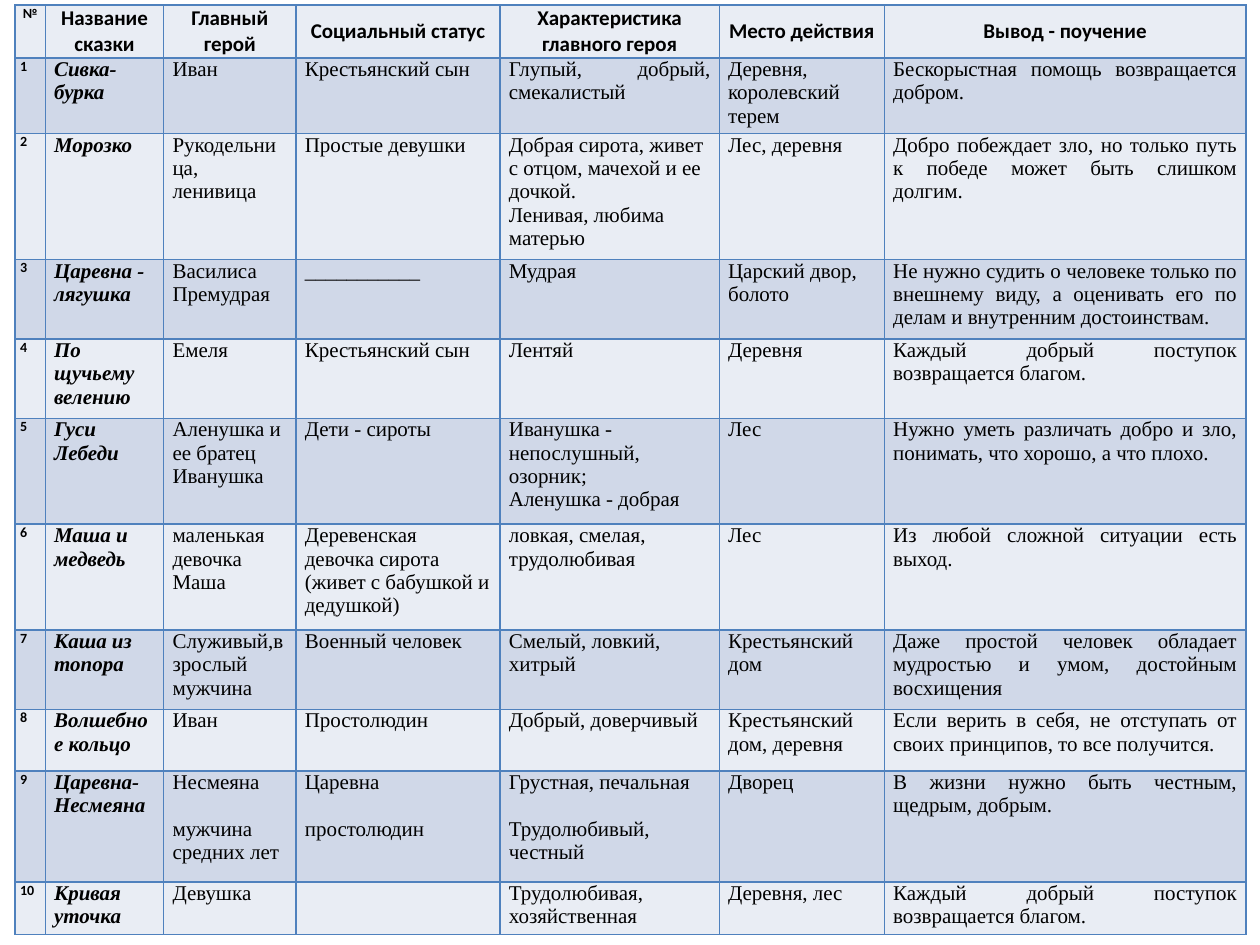
from lxml import etree
from pptx import Presentation
from pptx.dml.color import RGBColor
from pptx.enum import text
from pptx.oxml import ns
from pptx.util import Inches, Pt

COLORS = {"border": "4F81BD", "light": "E9EDF4", "dark": "D0D8E8", "text": "000000"}
HEADER = ["№", "Название сказки", "Главный герой", "Социальный статус",
          "Характеристика главного героя", "Место действия", "Вывод - поучение"]
# A line break starts a new paragraph, a double one leaves a gap before it.
TALES = [
    ("Сивка- бурка", "Иван", "Крестьянский сын", "Глупый, добрый, смекалистый",
     "Деревня,\nкоролевский терем", "Бескорыстная помощь возвращается добром."),
    ("Морозко", "Рукодельница, ленивица", "Простые девушки",
     "Добрая сирота, живет с отцом, мачехой и ее дочкой.\nЛенивая, любима матерью",
     "Лес, деревня",
     "Добро побеждает зло, но только путь к победе может быть слишком долгим."),
    ("Царевна - лягушка", "Василиса Премудрая", "___________", "Мудрая",
     "Царский двор,\nболото",
     "Не нужно судить о человеке только по внешнему виду, "
     "а оценивать его по делам и внутренним достоинствам."),
    ("По щучьему велению", "Емеля", "Крестьянский сын", "Лентяй", "Деревня",
     "Каждый добрый поступок возвращается благом."),
    ("Гуси Лебеди", "Аленушка и ее братец Иванушка", "Дети - сироты",
     "Иванушка - непослушный, озорник;\nАленушка - добрая", "Лес",
     "Нужно уметь различать добро и зло, понимать, что хорошо, а что плохо."),
    ("Маша и медведь", "маленькая девочка Маша",
     "Деревенская девочка сирота (живет с бабушкой и дедушкой)",
     "ловкая, смелая, трудолюбивая", "Лес", "Из любой сложной ситуации есть выход."),
    ("Каша из топора", "Служивый,взрослый мужчина", "Военный человек",
     "Смелый, ловкий, хитрый", "Крестьянский дом",
     "Даже простой человек обладает мудростью и умом, достойным восхищения"),
    ("Волшебное кольцо", "Иван", "Простолюдин", "Добрый, доверчивый",
     "Крестьянский дом, деревня",
     "Если верить в себя, не отступать от своих принципов, то все получится."),
    ("Царевна-Несмеяна", "Несмеяна\n\nмужчина средних лет", "Царевна\n\nпростолюдин",
     "Грустная, печальная\n\nТрудолюбивый, честный", "Дворец",
     "В жизни нужно быть честным, щедрым, добрым."),
    ("Кривая уточка", "Девушка", "", "Трудолюбивая, хозяйственная", "Деревня, лес",
     "Каждый добрый поступок возвращается благом."),
]
COLUMN_WIDTHS = [0.24, 0.94, 1.05, 1.62, 1.74, 1.31, 2.87]
ROW_HEIGHTS = [0.42, 0.6, 1.0, 0.63, 0.63, 0.84, 0.84, 0.63, 0.49, 0.88, 0.42]
LEFT, TOP = 0.12, 0.04
BLANK_LINE = Pt(13.5)


def add_borders(cell):
    properties = cell._tc.get_or_add_tcPr()
    for side in ("lnL", "lnR", "lnT", "lnB"):
        line = etree.SubElement(properties, ns.qn(f"a:{side}"), w=str(Pt(1)))
        fill = etree.SubElement(line, ns.qn("a:solidFill"))
        etree.SubElement(fill, ns.qn("a:srgbClr"), val=COLORS["border"])


def alignment(row, column):
    if row == 0:
        return text.PP_ALIGN.CENTER
    if row == 1 or column in (0, 5, 6):
        return text.PP_ALIGN.JUSTIFY
    return text.PP_ALIGN.LEFT


def fill_cell(cell, content, row, column):
    is_header, is_number = row == 0, column == 0
    add_borders(cell)
    cell.fill.solid()
    cell.fill.fore_color.rgb = RGBColor.from_string(COLORS["dark" if row % 2 else "light"])
    cell.margin_left = cell.margin_right = Inches(0.04 if is_header or is_number else 0.07)
    cell.margin_top = cell.margin_bottom = 0
    if is_header and not is_number:
        cell.vertical_anchor = text.MSO_ANCHOR.MIDDLE

    has_gap = "\n\n" in content
    cell.text_frame.text = content.replace("\n\n", "\n")
    for index, para in enumerate(cell.text_frame.paragraphs):
        para.alignment = alignment(row, column)
        if has_gap and index:
            para.space_before = BLANK_LINE
        para.font.size = Pt(12)
        for span in para.runs:
            font = span.font
            font.name = "Calibri" if is_header or is_number else "Times New Roman"
            font.size = Pt(8 if is_number else 12)
            font.bold = is_header or column < 2
            font.italic = not is_header and column == 1
            font.color.rgb = RGBColor.from_string(COLORS["text"])


def main():
    deck = Presentation()
    deck.slide_width, deck.slide_height = Inches(10), Inches(7.5)
    page = deck.slides.add_slide(deck.slide_layouts[6])

    rows = [HEADER] + [(str(number), *tale) for number, tale in enumerate(TALES, 1)]
    table = page.shapes.add_table(
        len(rows), len(HEADER), Inches(LEFT), Inches(TOP),
        Inches(sum(COLUMN_WIDTHS)), Inches(sum(ROW_HEIGHTS))).table
    for column, width in zip(table.columns, COLUMN_WIDTHS):
        column.width = Inches(width)
    for row, height in zip(table.rows, ROW_HEIGHTS):
        row.height = Inches(height)
    for row, contents in enumerate(rows):
        for column, content in enumerate(contents):
            fill_cell(table.cell(row, column), content, row, column)
    deck.save("out.pptx")


if __name__ == "__main__":
    main()
